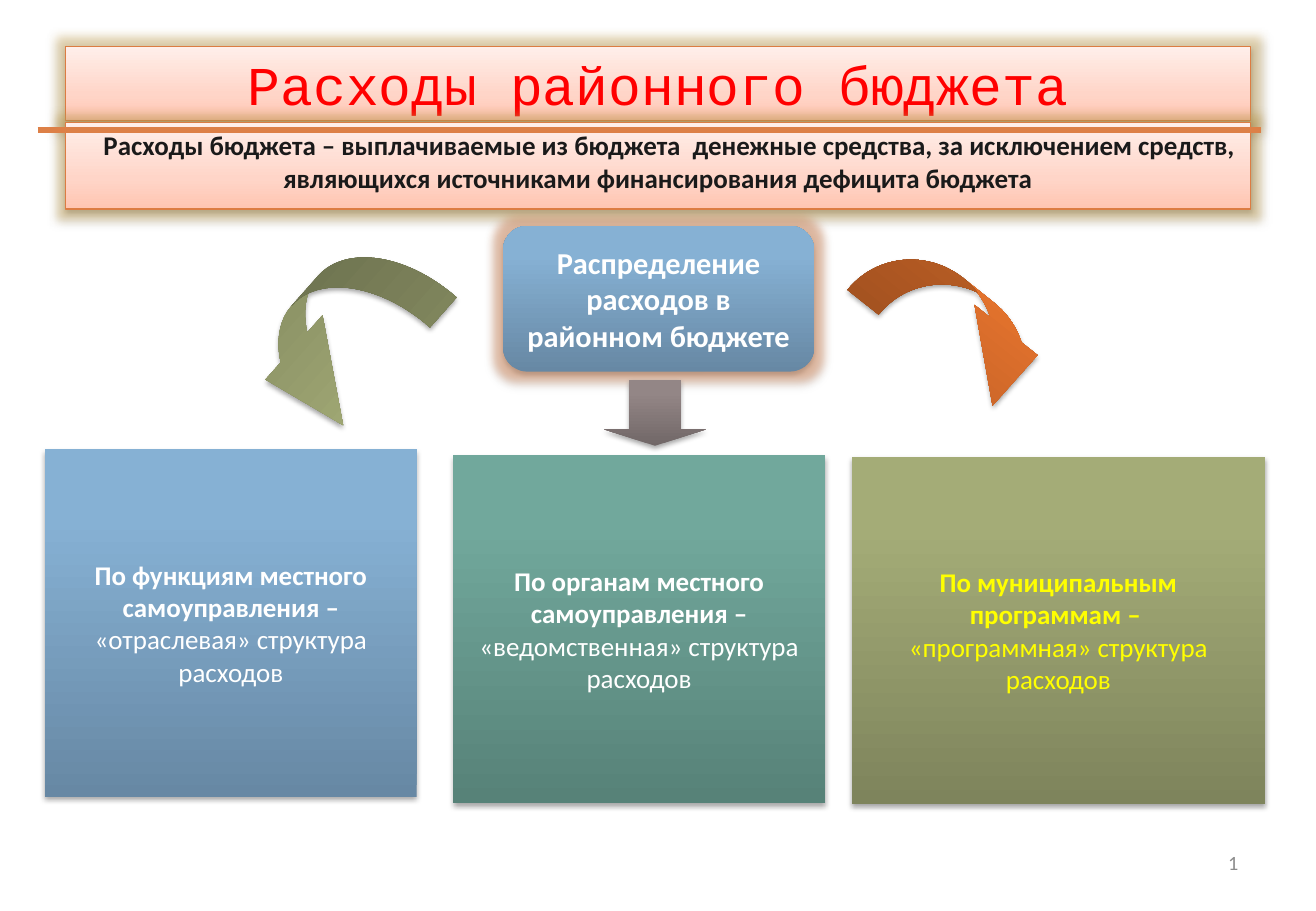
"""Build a slide on how district budget spending is split."""
from lxml.etree import SubElement as Sub
from pptx import Presentation
from pptx.dml.color import RGBColor
from pptx.enum.shapes import MSO_CONNECTOR as Link, MSO_SHAPE as Form
from pptx.enum.text import MSO_ANCHOR as Anchor, MSO_AUTO_SIZE as Fit, PP_ALIGN as Align
from pptx.oxml.ns import qn
from pptx.util import Inches, Pt

WIDE, HIGH = Inches(10.83), Inches(7.5)
RED = RGBColor(0xFF, 0x00, 0x00)
INK = RGBColor(0x1A, 0x1A, 0x1A)
GRAY = RGBColor(0x8C, 0x8C, 0x8C)
WHITE = RGBColor(0xFF, 0xFF, 0xFF)
YELLOW = RGBColor(0xFF, 0xFF, 0x00)
BLACK = RGBColor(0x00, 0x00, 0x00)
EDGE = RGBColor(0xDC, 0x7C, 0x42)
ORANGE = RGBColor(0xDD, 0x80, 0x47)
GOLD = RGBColor(0xD8, 0xB2, 0x5C)

PEACH = ((0, RGBColor(0xFF, 0xC5, 0xB1)), (35, RGBColor(0xFF, 0xD5, 0xC8)),
         (100, RGBColor(0xFF, 0xEF, 0xEA)))
BLUE = ((0, RGBColor(0x67, 0x88, 0xA4)), (80, RGBColor(0x86, 0xB1, 0xD4)),
        (100, RGBColor(0x86, 0xB2, 0xD7)))
TEAL = ((0, RGBColor(0x57, 0x82, 0x78)), (80, RGBColor(0x71, 0xA8, 0x9C)),
        (100, RGBColor(0x70, 0xAA, 0x9D)))
OLIVE = ((0, RGBColor(0x7E, 0x84, 0x5C)), (80, RGBColor(0xA4, 0xAC, 0x77)),
         (100, RGBColor(0xA6, 0xAE, 0x76)))
RUST = ((0, RGBColor(0xB6, 0x5B, 0x24)), (80, RGBColor(0xEC, 0x77, 0x2F)),
        (100, RGBColor(0xF1, 0x76, 0x2C)))
TAUPE = ((0, RGBColor(0x71, 0x67, 0x67)), (80, RGBColor(0x93, 0x86, 0x86)),
         (100, RGBColor(0x94, 0x87, 0x87)))


def area(left, top, width, height):
    """Turn percent shares of the slide into lengths."""
    return (int(WIDE * left / 100), int(HIGH * top / 100),
            int(WIDE * width / 100), int(HIGH * height / 100))


def tint(node, color, alpha):
    """Add a colour with the given percent of opacity."""
    tone = Sub(node, qn("a:srgbClr"), val=str(color))
    Sub(tone, qn("a:alpha"), val=str(alpha * 1000))


def shade(shape, stops, alpha=35, drop=1.8, glow=None):
    """Give a shape its gradient, soft shadow and glow."""
    shape.fill.gradient()
    shape.fill.gradient_angle = 90
    ramp = shape.fill._xPr.find(qn("a:gradFill")).find(qn("a:gsLst"))
    ramp.clear()
    for pos, color in stops:
        stop = Sub(ramp, qn("a:gs"), pos=str(pos * 1000))
        Sub(stop, qn("a:srgbClr"), val=str(color))
    shape.shadow.inherit = False
    effects = shape._element.spPr.find(qn("a:effectLst"))
    if glow:
        tint(Sub(effects, qn("a:glow"), rad=str(Pt(11))), glow, 40)
    cast = Sub(effects, qn("a:outerShdw"), blurRad=str(Pt(3.1)), dist=str(Pt(drop)),
               dir="5400000", algn="ctr", rotWithShape="0")
    tint(cast, BLACK, alpha)


def style(part, size, color, bold=False, font="Calibri", align=Align.CENTER):
    """Format every run of a paragraph."""
    part.alignment = align
    for run in part.runs:
        run.font.size, run.font.name, run.font.bold = Pt(size), font, bold
        run.font.color.rgb = color


def banner(shape, share, text, anchor, **look):
    """Move, fill and write one of the heading placeholders."""
    shape.left, shape.top, shape.width, shape.height = area(*share)
    shade(shape, PEACH, 38, 1.6, GOLD)
    shape.line.color.rgb, shape.line.width = EDGE, Pt(0.75)
    frame = shape.text_frame
    frame.text, frame.auto_size, frame.vertical_anchor = text, Fit.NONE, anchor
    style(frame.paragraphs[0], **look)


def block(slide, form, share, stops, glow=None, turn=0, bends=()):
    """Draw a shaded shape without an outline."""
    shape = slide.shapes.add_shape(form, *area(*share))
    shade(shape, stops, glow=glow)
    shape.line.fill.background()
    shape.rotation = turn
    for spot, bend in enumerate(bends):
        shape.adjustments[spot] = bend
    return shape


def inset(shape, side, edge):
    """Set the text margins and centre the text by height."""
    frame = shape.text_frame
    frame.word_wrap, frame.vertical_anchor = True, Anchor.MIDDLE
    frame.margin_left = frame.margin_right = Inches(side)
    frame.margin_top = frame.margin_bottom = Inches(edge)
    return frame


def card(slide, share, stops, head, note, color=WHITE, split=False):
    """Draw a card with a bold heading and a plain note."""
    frame = inset(block(slide, Form.RECTANGLE, share, stops), 0.12, 0)
    frame.text = head
    last = frame.add_paragraph() if split else frame.paragraphs[0]
    last.add_run().text = note
    for part in frame.paragraphs:
        style(part, 16, color, True)
    last.runs[-1].font.bold = False


def rule(slide, left, right, top):
    """Draw the line across the headings."""
    start, y, end, _ = area(left, top, right, 0)
    line = slide.shapes.add_connector(Link.STRAIGHT, start, y, end, y)
    line.line.color.rgb, line.line.width = ORANGE, Pt(3.75)
    Sub(line._element.spPr, qn("a:effectLst"))


def number(slide, share, text):
    """Write the page number."""
    frame = slide.shapes.add_textbox(*area(*share)).text_frame
    frame.word_wrap, frame.text = True, text
    style(frame.paragraphs[0], 12, GRAY, align=Align.RIGHT)


def main():
    """Put the slide together and save it."""
    deck = Presentation()
    deck.slide_width, deck.slide_height = WIDE, HIGH
    slide = deck.slides.add_slide(deck.slide_layouts[1])
    title, body = slide.placeholders

    banner(title, (5, 5.07, 90, 8.13), "Расходы районного бюджета", Anchor.MIDDLE,
           size=32.4, color=RED, font="Courier New")
    banner(body, (5, 13.47, 90, 9.47),
           "Расходы бюджета – выплачиваемые из бюджета  денежные средства, за исключением "
           "средств, являющихся источниками финансирования дефицита бюджета", Anchor.TOP,
           size=16, color=INK, bold=True)
    props = body.text_frame.paragraphs[0]._p.get_or_add_pPr()
    props.set("marL", "0")
    props.set("indent", str(Inches(0.19)))
    Sub(props, qn("a:buNone"))

    number(slide, (71.65, 92.67, 23.36, 5.33), "1")
    rule(slide, 2.86, 95.84, 14.27)

    hub = block(slide, Form.ROUNDED_RECTANGLE, (38.23, 24.8, 23.64, 16), BLUE, ORANGE)
    frame = inset(hub, 0.14, 0.05)
    frame.text = "Распределение расходов в районном бюджете"
    style(frame.paragraphs[0], 18, WHITE, True)

    card(slide, (3.42, 49.33, 28.25, 38.13), BLUE,
         "По функциям местного самоуправления – ", "«отраслевая» структура расходов")
    card(slide, (34.44, 50, 28.25, 38.13), TEAL,
         "По органам местного самоуправления – ", "«ведомственная» структура расходов")
    card(slide, (64.73, 50.13, 31.39, 38.13), OLIVE,
         "По муниципальным программам – ", "«программная» структура расходов",
         YELLOW, True)

    block(slide, Form.CURVED_UP_ARROW, (17.82, 30.67, 16.25, 12.93), OLIVE,
          turn=131.6, bends=(0.34, 0.73, 0.75))
    block(slide, Form.CURVED_DOWN_ARROW, (64.45, 31.6, 17.17, 8.93), RUST,
          turn=38.6, bends=(0.49, 0.99, 0.83))
    block(slide, Form.DOWN_ARROW, (45.89, 41.73, 7.76, 7.2), TAUPE, bends=(0.5, 0.25))
    deck.save("out.pptx")


if __name__ == "__main__":
    main()
